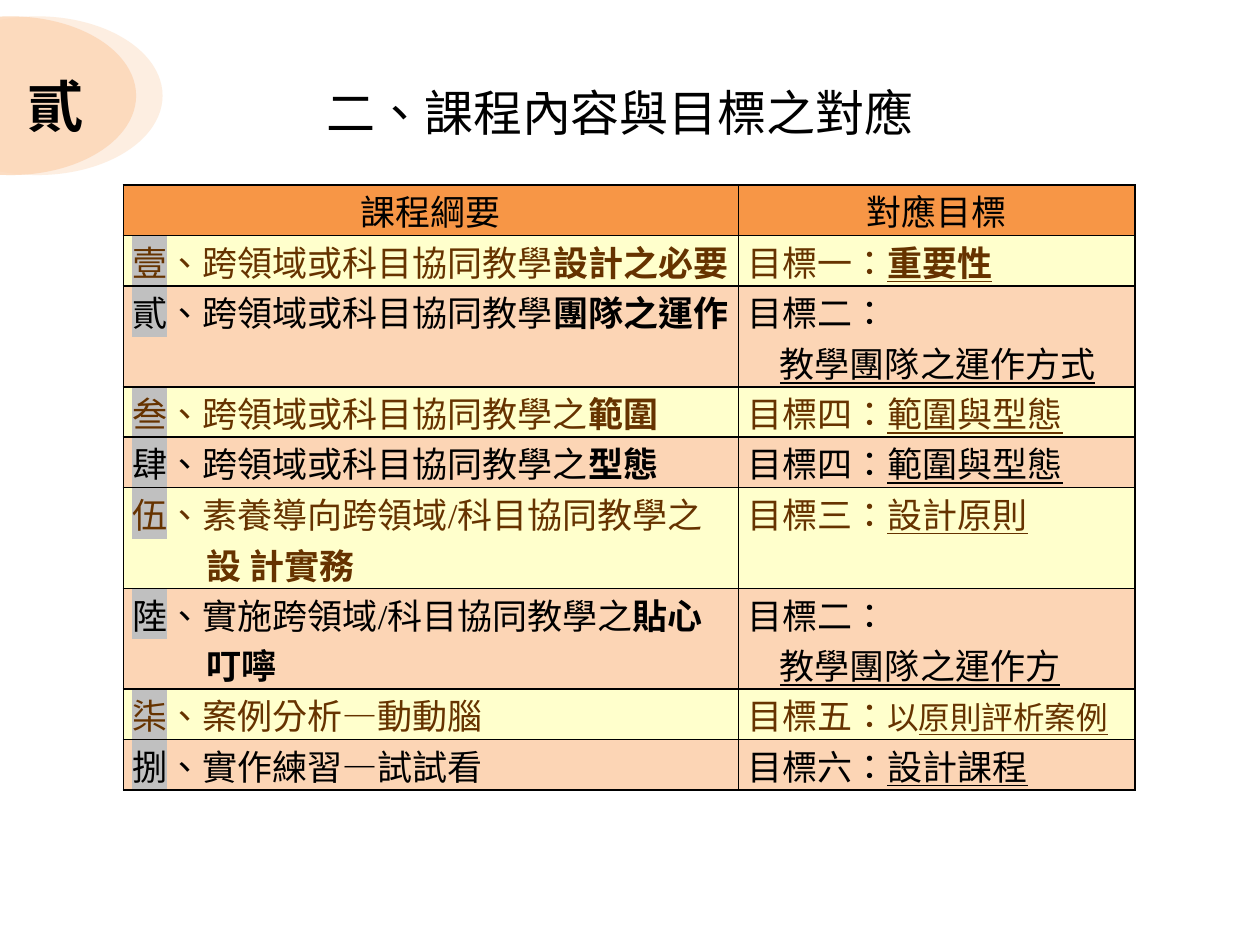
from dataclasses import dataclass

from lxml import etree
from pptx import Presentation
from pptx import util as u
from pptx.dml.color import RGBColor
from pptx.enum import shapes, text
from pptx.oxml import ns

COLORS = {
    "black": "000000", "brown": "663300", "highlight": "C0C0C0",
    "header": "F79646", "yellow": "FFFFCC", "peach": "FCD5B5", "pale": "FDEADA",
}
LATIN_FONT = "Times New Roman"
CJK_FONT = "Noto Sans CJK SC"
COLUMN_WIDTHS = (4.88, 3.15)
LINE_HEIGHT = 0.4


@dataclass
class Run:
    text: str
    bold: bool = False
    underline: bool = False
    highlight: bool = False
    size: int = 20
    font: str = LATIN_FONT


@dataclass
class Line:
    runs: list[Run]
    margin: float = 0
    indent: float = 0
    centered: bool = False


@dataclass
class Unit:
    number: str
    topic: str
    focus: str
    goal: list[Line]
    height: int = 1
    hanging: float = 0


def goal(label: str, answer: str, bold: bool = False) -> list[Line]:
    return [Line([Run(f"目標{label}："), Run(answer, bold, underline=True)])]


def two_line_goal(label: str, answer: str) -> list[Line]:
    return [Line([Run(f"目標{label}：")]), Line([Run(answer, underline=True)], margin=0.26)]


CASE_GOAL = [Line([Run("目標五："), Run("以", size=18, font=CJK_FONT),
                   Run("原則評析案例", underline=True, size=18)], 1.18, -1.18)]
UNITS = [
    Unit("壹", "、跨領域或科目協同教學", "設計之必要", goal("一", "重要性", bold=True)),
    Unit("貳", "、跨領域或科目協同教學", "團隊之運作", two_line_goal("二", "教學團隊之運作方式"), 2),
    Unit("叁", "、跨領域或科目協同教學之", "範圍", goal("四", "範圍與型態")),
    Unit("肆", "、跨領域或科目協同教學之", "型態", goal("四", "範圍與型態")),
    Unit("伍", "、素養導向跨領域/科目協同教學之", "設 計實務", goal("三", "設計原則"), 2, 0.59),
    Unit("陸", "、實施跨領域/科目協同教學之", "貼心叮嚀", two_line_goal("二", "教學團隊之運作方"), 2, 0.59),
    Unit("柒", "、案例分析—動動腦", "", CASE_GOAL),
    Unit("捌", "、實作練習—試試看", "", goal("六", "設計課程")),
]


def rgb(name: str) -> RGBColor:
    return RGBColor.from_string(COLORS[name])


def add_color(parent, tag: str, name: str):
    """Append an XML element that holds one colour and return that colour."""
    holder = etree.SubElement(parent, ns.qn(tag))
    return etree.SubElement(holder, ns.qn("a:srgbClr"), val=COLORS[name])


def write_run(paragraph, item: Run, color: str):
    run = paragraph.add_run()
    run.text = item.text
    font = run.font
    font.size = u.Pt(item.size)
    font.bold = item.bold
    font.underline = item.underline
    font.color.rgb = rgb(color)
    properties = run._r.get_or_add_rPr()
    properties.set("lang", "zh-TW")
    if item.highlight:
        add_color(properties, "a:highlight", "highlight")
    font.name = item.font
    etree.SubElement(properties, ns.qn("a:ea"), typeface=CJK_FONT)
    return run


def write_lines(frame, lines: list[Line], color: str) -> None:
    for index, line in enumerate(lines):
        paragraph = frame.add_paragraph() if index else frame.paragraphs[0]
        properties = paragraph._p.get_or_add_pPr()
        properties.set("marL", str(u.Inches(line.margin)))
        properties.set("indent", str(u.Inches(line.indent)))
        paragraph.alignment = text.PP_ALIGN.CENTER if line.centered else text.PP_ALIGN.LEFT
        for item in line.runs:
            write_run(paragraph, item, color)


def fill_cell(cell, lines: list[Line], fill: str, color: str) -> None:
    cell.margin_left = cell.margin_right = u.Inches(0.07)
    cell.margin_top = cell.margin_bottom = 0
    properties = cell._tc.get_or_add_tcPr()
    for side in ("a:lnL", "a:lnR", "a:lnT", "a:lnB"):
        border = etree.SubElement(properties, ns.qn(side), w=str(u.Pt(1)))
        add_color(border, "a:solidFill", "black")
    cell.fill.solid()
    cell.fill.fore_color.rgb = rgb(fill)
    write_lines(cell.text_frame, lines, color)


def add_title(slide) -> None:
    box = slide.shapes.add_textbox(u.Inches(2.4), u.Inches(0.54), u.Inches(5.04), u.Inches(0.69))
    frame = box.text_frame
    frame.word_wrap = True
    frame.vertical_anchor = text.MSO_ANCHOR.MIDDLE
    write_lines(frame, [Line([Run("二、課程內容與目標之對應", size=28)], centered=True)], "black")
    properties = frame.paragraphs[0].runs[0]._r.get_or_add_rPr()
    effects = etree.Element(ns.qn("a:effectLst"))
    properties.find(ns.qn("a:solidFill")).addnext(effects)
    shadow = etree.SubElement(effects, ns.qn("a:outerShdw"), blurRad=str(u.Pt(3)),
                              dist=str(u.Pt(3)), dir="2700000")
    shade = etree.SubElement(shadow, ns.qn("a:srgbClr"), val=COLORS["black"])
    etree.SubElement(shade, ns.qn("a:alpha"), val="43000")


def add_outline_table(slide) -> None:
    heights = [1] + [unit.height for unit in UNITS]
    table = slide.shapes.add_table(
        len(heights), len(COLUMN_WIDTHS), u.Inches(0.98), u.Inches(1.47),
        u.Inches(sum(COLUMN_WIDTHS)), u.Inches(sum(heights) * LINE_HEIGHT)).table
    for column, width in zip(table.columns, COLUMN_WIDTHS):
        column.width = u.Inches(width)
    for row, height in zip(table.rows, heights):
        row.height = u.Inches(height * LINE_HEIGHT)
    for index, heading in enumerate(("課程綱要", "對應目標")):
        fill_cell(table.cell(0, index), [Line([Run(heading)], centered=True)], "header", "black")
    for index, unit in enumerate(UNITS, start=1):
        fill, color = ("yellow", "brown") if index % 2 else ("peach", "black")
        runs = [Run(unit.number, highlight=True), Run(unit.topic)]
        if unit.focus:
            runs.append(Run(unit.focus, bold=True))
        topic = Line(runs, unit.hanging, -unit.hanging)
        fill_cell(table.cell(index, 0), [topic], fill, color)
        fill_cell(table.cell(index, 1), unit.goal, fill, color)


def add_chapter_badge(slide) -> None:
    group = slide.shapes.add_group_shape()
    for left, color in ((-0.7, "pale"), (-0.91, "peach")):
        ellipse = group.shapes.add_shape(
            shapes.MSO_SHAPE.OVAL, u.Inches(left), u.Inches(0.13), u.Inches(1.99), u.Inches(1.26))
        ellipse.shadow.inherit = False
        ellipse.line.fill.background()
        ellipse.fill.solid()
        ellipse.fill.fore_color.rgb = rgb(color)
        shade = ellipse._element.spPr.find(ns.qn("a:solidFill"))[0]
        etree.SubElement(shade, ns.qn("a:alpha"), val="80000")
    box = slide.shapes.add_textbox(u.Inches(0.12), u.Inches(0.52), u.Inches(0.61), u.Inches(0.64))
    box.text_frame.auto_size = text.MSO_AUTO_SIZE.SHAPE_TO_FIT_TEXT
    write_lines(box.text_frame, [Line([Run("貳", bold=True, size=32, font=CJK_FONT)])], "black")


def main() -> None:
    presentation = Presentation()
    presentation.slide_width = u.Inches(10)
    presentation.slide_height = u.Inches(7.5)
    slide = presentation.slides.add_slide(presentation.slide_layouts[6])
    add_title(slide)
    add_outline_table(slide)
    add_chapter_badge(slide)
    presentation.save("out.pptx")


if __name__ == "__main__":
    main()
